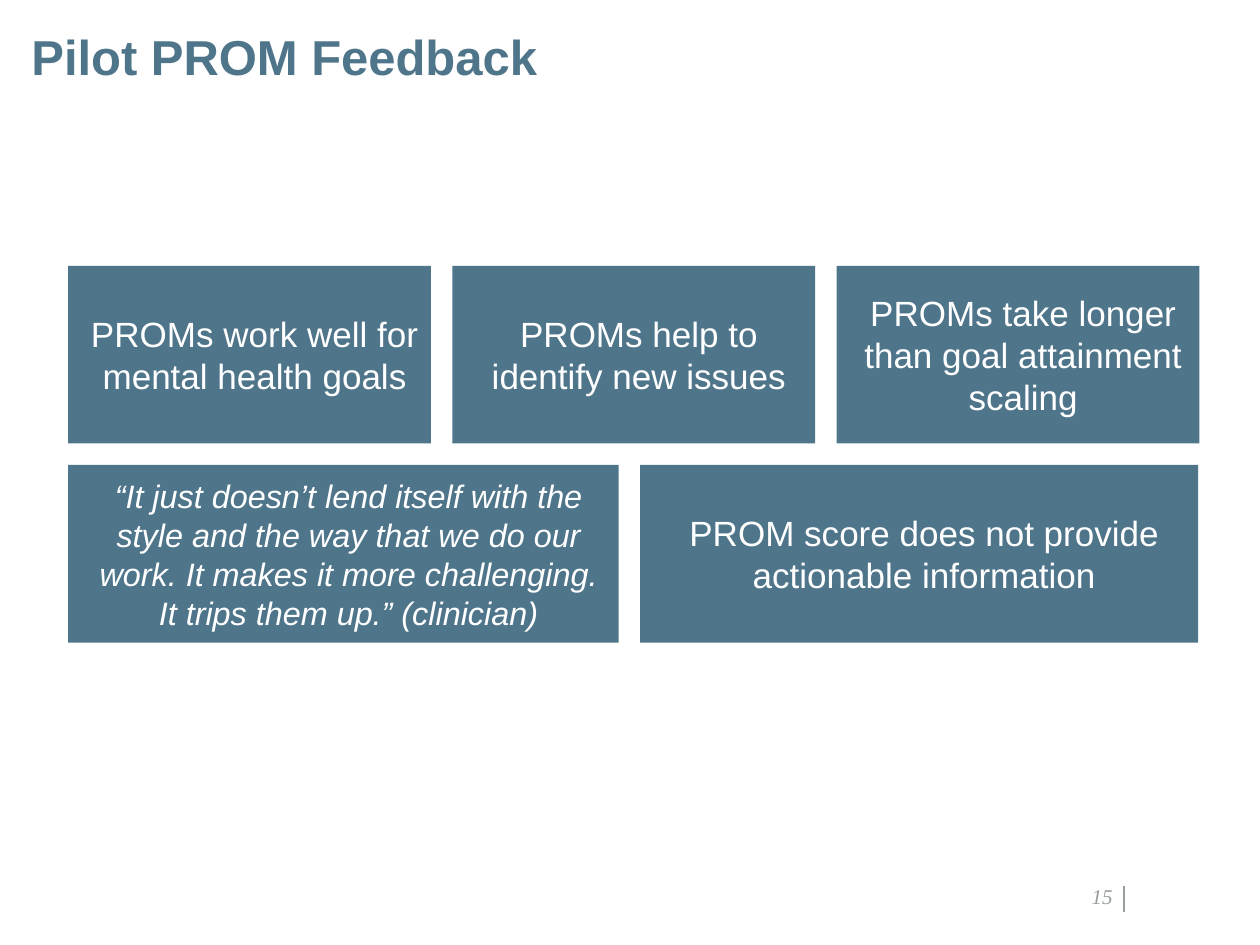
from lxml import etree
from pptx import Presentation
from pptx.dml.color import RGBColor
from pptx.enum import shapes, text
from pptx.oxml.ns import qn
from pptx.util import Inches, Pt

BLUE = RGBColor(0x4F, 0x75, 0x8B)
GREY = RGBColor(0x98, 0x9D, 0x9F)
WHITE = RGBColor(0xFF, 0xFF, 0xFF)

deck = Presentation()
deck.slide_width, deck.slide_height = Inches(10), Inches(7.5)
slide = deck.slides.add_slide(deck.slide_layouts[6])


def write(frame, words, size, color, face="Arial", bold=False, italic=False):
    frame.word_wrap = True
    para = frame.paragraphs[0]
    para.text = words
    font = para.font
    font.name, font.size, font.color.rgb = face, Pt(size), color
    font.bold, font.italic = bold, italic
    return para


def pad(frame, left, top, right, bottom):
    frame.margin_left, frame.margin_top = Inches(left), Inches(top)
    frame.margin_right, frame.margin_bottom = Inches(right), Inches(bottom)


# Title
title = slide.shapes.add_textbox(Inches(0.25), Inches(0.26), Inches(9.5), Inches(0.41)).text_frame
pad(title, 0, 0, 0.1, 0)
write(title, "Pilot PROM Feedback", 28, BLUE, bold=True).line_spacing = 0.9

# Feedback cards: width, words, size, italic
LEFT, TOP, HIGH, GAP = 0.54, 2.11, 1.41, 0.17
rows = [
    [(2.88, "PROMs work well for mental health goals", 20, False),
     (2.88, "PROMs help to identify new issues", 20, False),
     (2.88, "PROMs take longer than goal attainment scaling", 20, False)],
    [(4.37, "“It just doesn’t lend itself with the style and the way that we do our work. "
            "It makes it more challenging. It trips them up.” (clinician)", 18.5, True),
     (4.43, "PROM score does not provide actionable information", 20, False)],
]
for i, row in enumerate(rows):
    x, y = LEFT, TOP + i * (HIGH + GAP)
    for wide, words, size, slant in row:
        card = slide.shapes.add_shape(shapes.MSO_SHAPE.RECTANGLE, Inches(x), Inches(y),
                                      Inches(wide), Inches(HIGH))
        card.shadow.inherit = False
        card.fill.solid()
        card.fill.fore_color.rgb = BLUE
        card.line.fill.background()
        frame = card.text_frame
        pad(frame, 0.18, 0.1, 0.1, 0.1)
        frame.vertical_anchor = text.MSO_ANCHOR.MIDDLE
        write(frame, words, size, WHITE, italic=slant).alignment = text.PP_ALIGN.CENTER
        x += wide + GAP

# Page number and rule
page = slide.shapes.add_textbox(Inches(8.24), Inches(7.03), Inches(0.59), Inches(0.18)).text_frame
pad(page, 0, 0, 0, 0)
page.vertical_anchor = text.MSO_ANCHOR.BOTTOM
write(page, "15", 12, GREY, "Times New Roman", italic=True).alignment = text.PP_ALIGN.RIGHT

rule = slide.shapes.add_connector(shapes.MSO_CONNECTOR.STRAIGHT, Inches(8.92), Inches(7.03),
                                  Inches(8.92), Inches(7.24))
rule.line.color.rgb = GREY
rule.line.width = Pt(1)
etree.SubElement(rule._element.spPr, qn("a:effectLst"))

deck.save("out.pptx")
